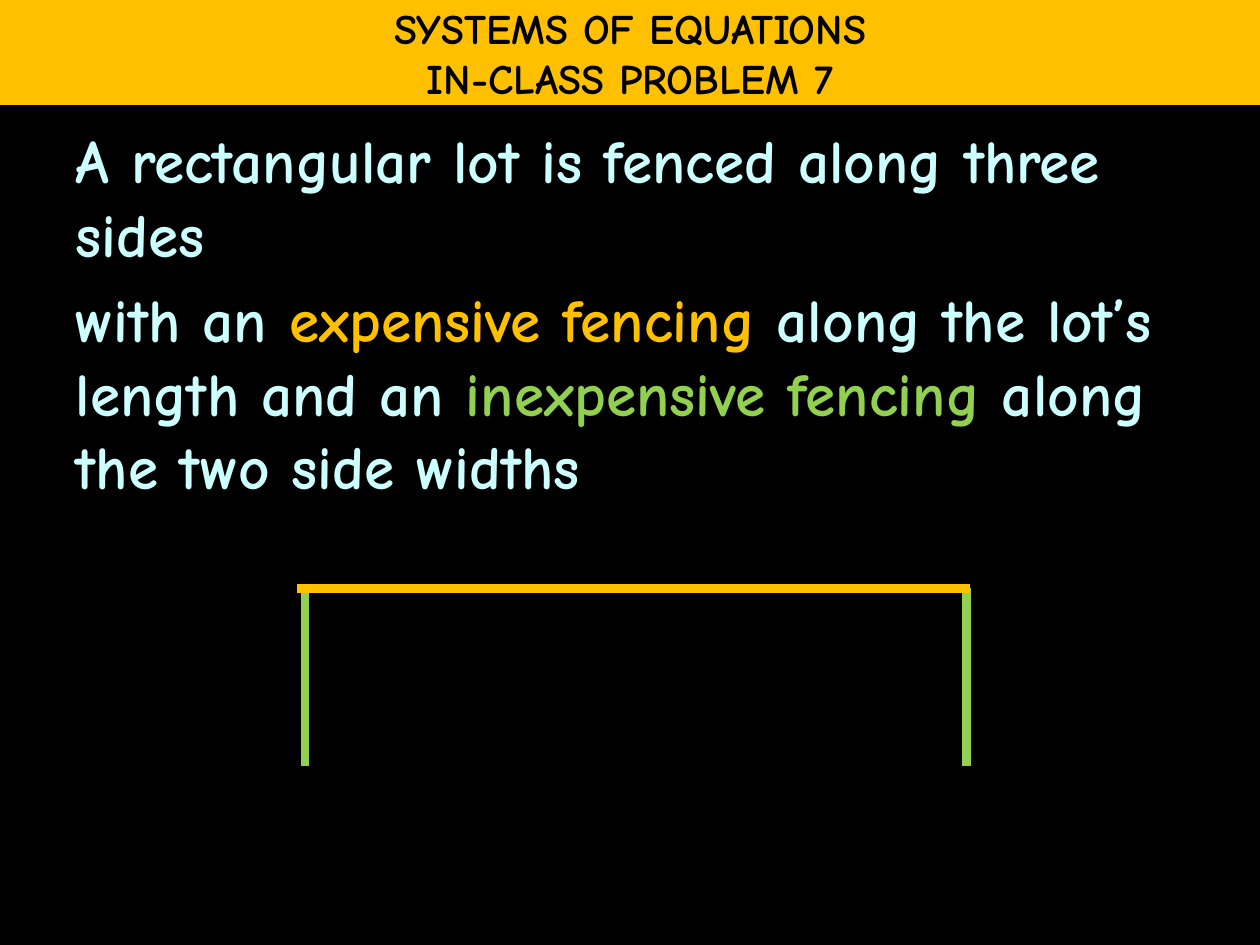
"""Build the fencing word problem slide with its three-sided lot diagram."""
from lxml.etree import SubElement
from pptx import Presentation
from pptx.dml.color import RGBColor
from pptx.enum.shapes import MSO_CONNECTOR as Connector
from pptx.enum.text import MSO_ANCHOR as Anchor, MSO_AUTO_SIZE as AutoSize, PP_ALIGN as Align
from pptx.oxml.ns import qn
from pptx.util import Inches, Pt

COLORS = {
    "background": "000000",
    "heading": "000000",
    "statement": "CCFFFF",
    "expensive": "FFC000",
    "inexpensive": "92D050",
}
FONT = "Comic Neue"
WIDTH, HEIGHT = 10, 7.5
HEADING = [
    [("SYSTEMS OF EQUATIONS", "heading")],
    [("IN-CLASS PROBLEM 7", "heading")],
]
STATEMENT = [
    [("A rectangular lot is fenced along three sides", "statement")],
    [
        ("with an ", "statement"),
        ("expensive fencing ", "expensive"),
        ("along the lot’s length and an ", "statement"),
        ("inexpensive fencing", "inexpensive"),
        (" along the two side widths", "statement"),
    ],
]
HEADING_BOX = (0, 0, WIDTH, HEIGHT / 9)
STATEMENT_BOX = (0.05 * WIDTH, 0.92, 0.9 * WIDTH, 6.17)
LOT_LEFT, LOT_RIGHT, LOT_TOP, LOT_BOTTOM = 2.42, 7.67, 4.67, 6.08
FENCES = [
    ("inexpensive", (LOT_LEFT, LOT_TOP, LOT_LEFT, LOT_BOTTOM)),
    ("inexpensive", (LOT_RIGHT, LOT_TOP, LOT_RIGHT, LOT_BOTTOM)),
    ("expensive", (LOT_RIGHT + 0.03, LOT_TOP, LOT_LEFT - 0.06, LOT_TOP)),
]
FENCE_WEIGHT = 5


def color(name):
    return RGBColor.from_string(COLORS[name])


def apply(target, settings):
    for attribute, value in settings.items():
        setattr(target, attribute, value)


def write(placeholder, box, paragraphs, size, frame_format, paragraph_format):
    apply(placeholder, dict(zip(("left", "top", "width", "height"), map(Inches, box))))
    frame = placeholder.text_frame
    apply(frame, {"auto_size": AutoSize.NONE, **frame_format})
    for index, pieces in enumerate(paragraphs):
        paragraph = frame.add_paragraph() if index else frame.paragraphs[0]
        apply(paragraph, paragraph_format)
        properties = paragraph._p.get_or_add_pPr()
        apply_indent = {"marL": "0", "indent": "0"}
        for key, value in apply_indent.items():
            properties.set(key, value)
        SubElement(properties, qn("a:buNone"))
        for text, tone in pieces:
            run = paragraph.add_run()
            run.text = text
            apply(run.font, {"name": FONT, "size": Pt(size), "bold": True})
            run.font.color.rgb = color(tone)


def draw_fence(slide, tone, ends):
    fence = slide.shapes.add_connector(Connector.STRAIGHT, *map(Inches, ends))
    fence.line.color.rgb = color(tone)
    fence.line.width = Pt(FENCE_WEIGHT)
    SubElement(fence._element.spPr, qn("a:effectLst"))


def main():
    deck = Presentation()
    apply(deck, {"slide_width": Inches(WIDTH), "slide_height": Inches(HEIGHT)})
    slide = deck.slides.add_slide(deck.slide_layouts[1])
    slide.background.fill.solid()
    slide.background.fill.fore_color.rgb = color("background")

    heading, statement = slide.placeholders
    heading.fill.solid()
    heading.fill.fore_color.rgb = color("expensive")
    write(heading, HEADING_BOX, HEADING, 24,
          {"word_wrap": False, "vertical_anchor": Anchor.MIDDLE},
          {"alignment": Align.CENTER, "space_before": Pt(0)})
    write(statement, STATEMENT_BOX, STATEMENT, 35,
          {"word_wrap": True, "vertical_anchor": Anchor.TOP},
          {"alignment": Align.LEFT, "space_before": Pt(7)})
    for tone, ends in FENCES:
        draw_fence(slide, tone, ends)
    deck.save("out.pptx")


if __name__ == "__main__":
    main()
